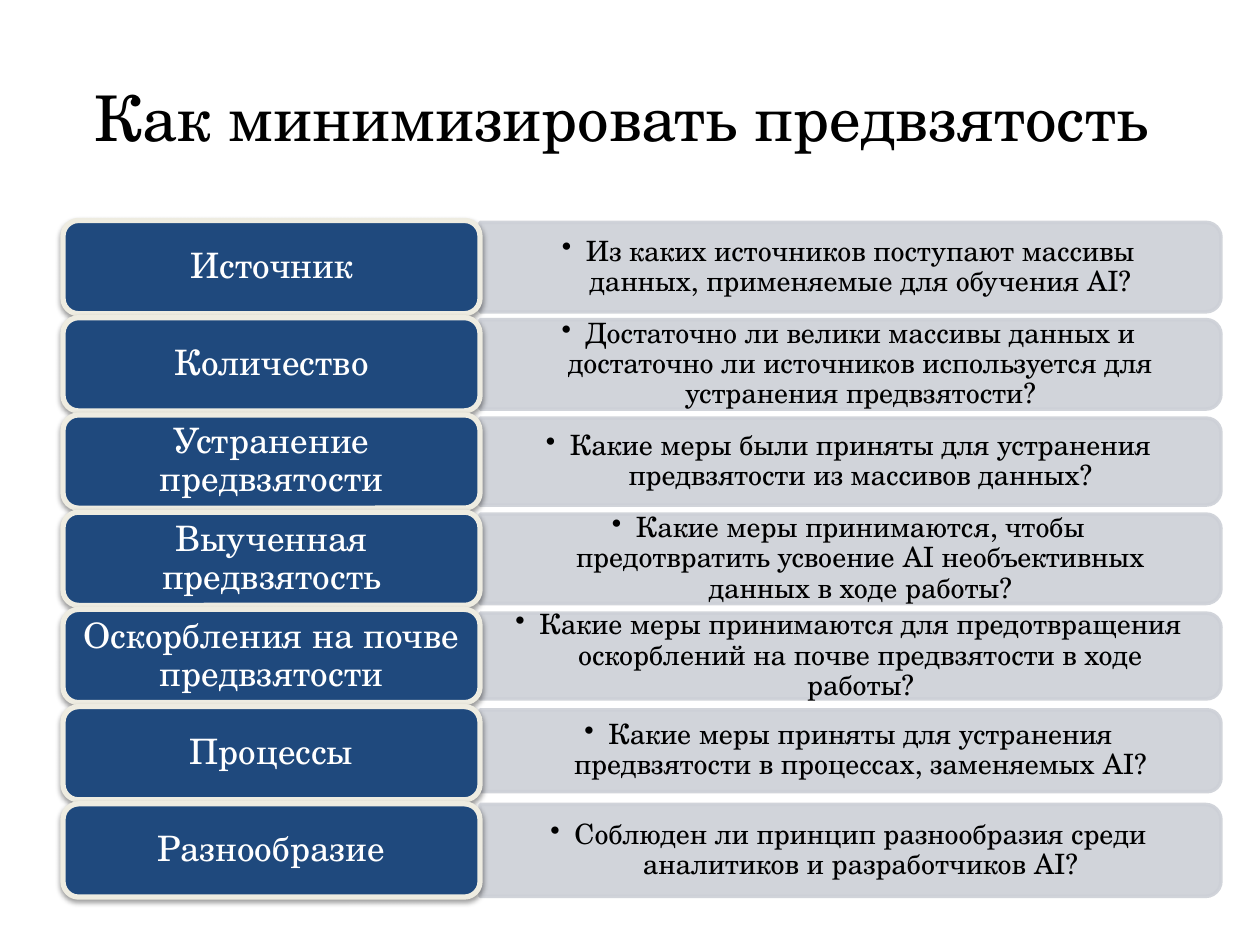
from lxml.etree import SubElement
from pptx import Presentation
from pptx.dml.color import RGBColor
from pptx.enum.shapes import MSO_SHAPE
from pptx.enum.text import MSO_ANCHOR, PP_ALIGN
from pptx.oxml.ns import qn
from pptx.util import Inches, Pt

FONT = "TeX Gyre Schola"
COLORS = {
    "label": "1F497D",
    "label_border": "EEECE1",
    "bar": "CDD0D7",
    "dark_text": "000000",
    "light_text": "FFFFFF",
    "shadow": "000000",
}

TITLE = "Как минимизировать предвзятость "
# label, question, bar height, vertical shift of the bar
ROWS = [
    ("Источник",
     "Из каких источников поступают массивы данных, применяемые для обучения AI?", 0.71, 0),
    ("Количество",
     "Достаточно ли велики массивы данных и достаточно ли источников "
     "используется для устранения предвзятости?", 0.71, 0),
    ("Устранение предвзятости",
     "Какие меры были приняты для устранения предвзятости из массивов данных?", 0.69, 0),
    ("Выученная предвзятость",
     "Какие меры принимаются, чтобы предотвратить усвоение AI "
     "необъективных данных в ходе работы?", 0.71, 0),
    ("Оскорбления на почве предвзятости",
     "Какие меры принимаются для предотвращения оскорблений на почве "
     "предвзятости в ходе работы?", 0.68, 0),
    ("Процессы",
     "Какие меры приняты для устранения предвзятости в процессах, заменяемых AI?", 0.65, -0.02),
    ("Разнообразие",
     "Соблюден ли принцип разнообразия среди аналитиков и разработчиков AI?", 0.73, 0),
]

# Grid in inches
LEFT, FIRST_TOP, LAST_TOP = 0.5, 1.75, 6.38
LABEL_WIDTH, LABEL_HEIGHT = 3.31, 0.74
BAR_LEFT, BAR_WIDTH = LEFT + LABEL_WIDTH, 5.88
PITCH = (LAST_TOP - FIRST_TOP) / (len(ROWS) - 1)


def color(name):
    return RGBColor.from_string(COLORS[name])


def add_alpha(fill_element, percent):
    SubElement(fill_element[0], qn("a:alpha"), val=str(percent * 1000))


def write(shape, text, size, color_name, margins=(0.1, 0.05), line_spacing=None):
    frame = shape.text_frame
    frame.word_wrap = True
    frame.vertical_anchor = MSO_ANCHOR.MIDDLE
    frame.margin_left = frame.margin_right = Inches(margins[0])
    frame.margin_top = frame.margin_bottom = Inches(margins[1])
    paragraph = frame.paragraphs[0]
    paragraph.text = text
    paragraph.alignment = PP_ALIGN.CENTER
    paragraph.line_spacing = line_spacing
    paragraph.font.name = FONT
    paragraph.font.size = Pt(size)
    paragraph.font.color.rgb = color(color_name)
    return paragraph


def add_box(slide, preset, left, top, width, height, fill, border, border_width):
    shape = slide.shapes.add_shape(
        preset, Inches(left), Inches(top), Inches(width), Inches(height))
    shape.shadow.inherit = False
    shape.fill.solid()
    shape.fill.fore_color.rgb = color(fill)
    shape.line.color.rgb = color(border)
    shape.line.width = Pt(border_width)
    return shape


def add_bar(slide, center, height):
    # A tall shape turned a quarter, so its rounded end faces right
    shape = add_box(slide, MSO_SHAPE.ROUND_2_SAME_RECTANGLE,
                    BAR_LEFT + (BAR_WIDTH - height) / 2, center - BAR_WIDTH / 2,
                    height, BAR_WIDTH, "bar", "bar", 2)
    shape.rotation = 90
    properties = shape._element.spPr
    add_alpha(properties.find(qn("a:solidFill")), 90)
    add_alpha(properties.find(qn("a:ln")).find(qn("a:solidFill")), 90)


def add_question(slide, text, center, height):
    box = slide.shapes.add_textbox(Inches(BAR_LEFT), Inches(center - height / 2),
                                   Inches(BAR_WIDTH - 0.03), Inches(height))
    paragraph = write(box, text, 16, "dark_text", (0.27, 0.14), 0.9)
    paragraph.level = 1
    properties = paragraph._p.get_or_add_pPr()
    properties.set("marL", str(Inches(0.19)))
    properties.set("indent", str(Inches(-0.19)))
    SubElement(properties, qn("a:buChar"), char="•")


def add_label(slide, text, top):
    shape = add_box(slide, MSO_SHAPE.ROUNDED_RECTANGLE, LEFT, top,
                    LABEL_WIDTH, LABEL_HEIGHT, "label", "label_border", 3)
    write(shape, text, 20, "light_text", (0.08, 0.04), 0.9)
    effects = shape._element.spPr.find(qn("a:effectLst"))
    shadow = SubElement(effects, qn("a:outerShdw"), blurRad=str(Pt(3.1)),
                        dist=str(Pt(1.6)), dir="5400000", rotWithShape="0")
    SubElement(shadow, qn("a:srgbClr"), val=COLORS["shadow"])
    add_alpha(shadow, 38)


def main():
    presentation = Presentation()
    presentation.slide_width, presentation.slide_height = Inches(10), Inches(7.5)
    slide = presentation.slides.add_slide(presentation.slide_layouts[6])

    # Title
    title = slide.shapes.add_textbox(Inches(0.5), Inches(0.3), Inches(9), Inches(1.25))
    write(title, TITLE, 36, "dark_text")

    # Rows: bar, question, label
    for index, (label, question, bar_height, shift) in enumerate(ROWS):
        top = FIRST_TOP + index * PITCH
        center = top + LABEL_HEIGHT / 2 + shift
        add_bar(slide, center, bar_height)
        add_question(slide, question, center, bar_height - 0.07)
        add_label(slide, label, top)

    presentation.save("out.pptx")


if __name__ == "__main__":
    main()
